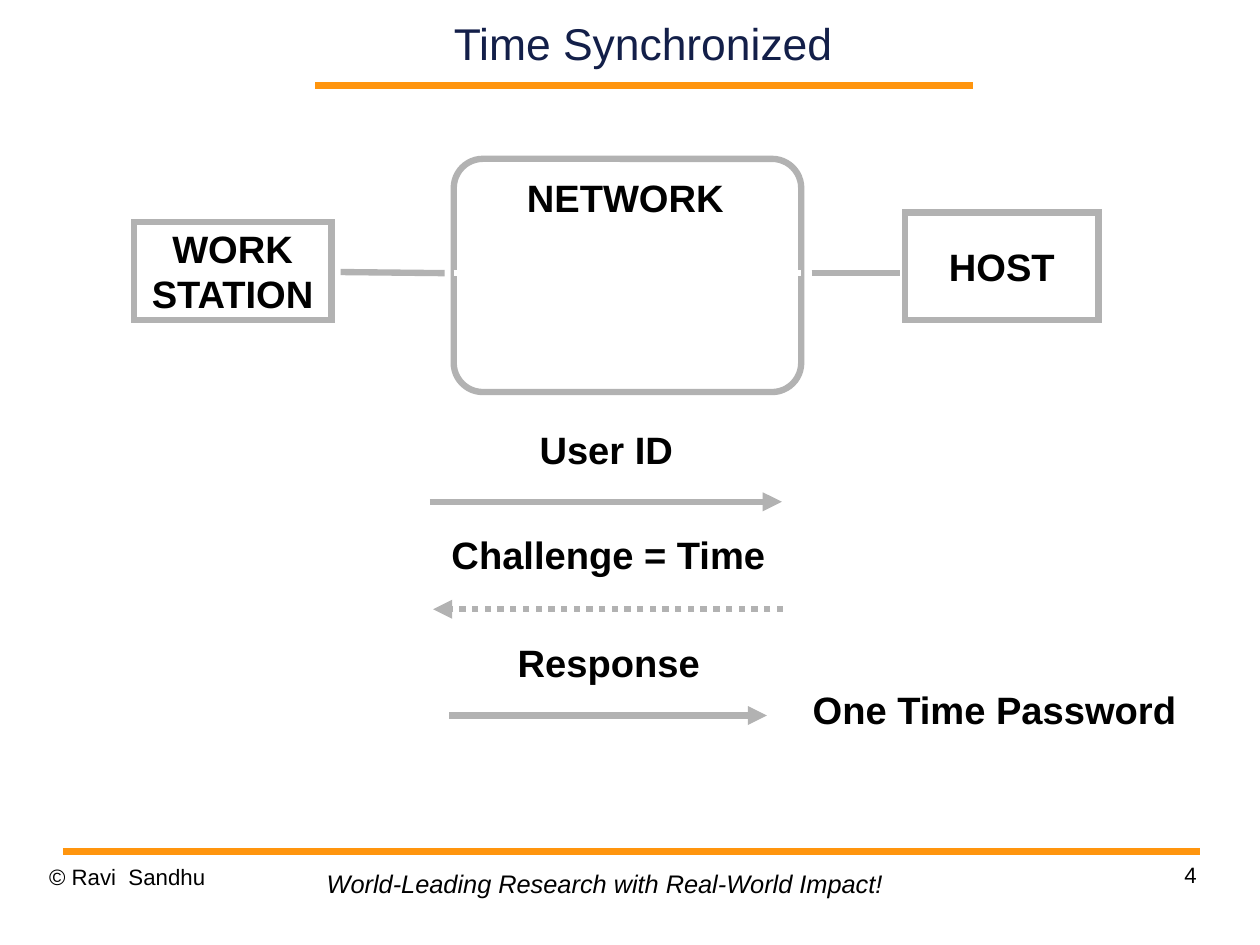
"""Build the Time Synchronized slide: a login exchange between workstation and host."""
from dataclasses import dataclass

from lxml import etree
from pptx import Presentation
from pptx.dml.color import RGBColor
from pptx.enum import dml, shapes, text
from pptx.oxml.ns import qn
from pptx.util import Inches, Pt

LEFT, CENTER, RIGHT = text.PP_ALIGN.LEFT, text.PP_ALIGN.CENTER, text.PP_ALIGN.RIGHT
TOP, MIDDLE = text.MSO_ANCHOR.TOP, text.MSO_ANCHOR.MIDDLE
CM_PER_INCH = 2.54
WIDTH_CM, HEIGHT_CM = 28, 21


@dataclass(frozen=True)
class Theme:
    font: str = "Arial"
    title_ink: str = "131F49"
    ink: str = "000000"
    accent: str = "FF950E"
    gray: str = "B2B2B2"
    paper: str = "FFFFFF"
    title: int = 28
    label: int = 24
    motto: int = 16
    footer: int = 14
    rule: float = 4.31
    stroke: float = 4


T = Theme()


@dataclass(frozen=True)
class Style:
    size: int = T.label
    color: str = T.ink
    bold: bool = False
    italic: bool = False
    align: text.PP_ALIGN = LEFT
    anchor: text.MSO_ANCHOR = TOP
    spacing: float = 1.0
    margins: tuple[float, float] = (0, 0)
    wrap: bool = True


@dataclass(frozen=True)
class Box:
    at: tuple[float, float, float, float]
    lines: tuple[str, ...] = ()
    style: Style = Style()


@dataclass(frozen=True)
class Line:
    start: float
    end: float
    y: float
    y_end: float | None = None
    color: str = T.gray
    width: float = T.stroke
    arrow: bool = False
    dotted: bool = False


TITLE = Style(T.title, T.title_ink, align=CENTER, anchor=MIDDLE)
NODE = Style(bold=True, align=CENTER, anchor=MIDDLE, margins=(0.1, 0.05), wrap=False)
LABEL = Style(bold=True, spacing=0.87, margins=(0.07, 0.03), wrap=False)
FOOTER = Style(T.footer, spacing=1.01)
PAGE = Style(T.footer, align=RIGHT, spacing=1.01)
MOTTO = Style(T.motto, italic=True, margins=(0.1, 0.05), wrap=False)

HEADING = Box((2.41, 0, 6.43, 0.75), ("Time Synchronized",), TITLE)
NODES = (
    Box((7.92, 1.86, 1.69, 0.94), ("HOST",), NODE),
    Box((1.17, 1.94, 1.73, 0.86), ("WORK", "STATION"), NODE),
)
NETWORK = Box((3.97, 1.39, 3.04, 2.04))
TEXTS = (
    Box((0.43, 7.55, 2.57, 0.57), ("© Ravi  Sandhu",), FOOTER),
    Box((7.9, 7.53, 2.57, 0.57), ("4",), PAGE),
    Box((2.76, 7.55, 5.08, 0.37), ("World-Leading Research with Real-World Impact!",), MOTTO),
    Box((4.54, 1.55, 1.87, 0.42), ("NETWORK",), LABEL),
    Box((4.65, 3.76, 1.32, 0.42), ("User ID",), LABEL),
    Box((3.88, 4.67, 2.91, 0.41), ("Challenge = Time",), LABEL),
    Box((4.46, 5.62, 1.74, 0.42), ("Response",), LABEL),
    Box((7.04, 6.03, 3.35, 0.41), ("One Time Password",), LABEL),
)
LINES = (
    Line(2.76, 8.51, 0.75, color=T.accent, width=T.rule),
    Line(0.55, 10.5, 7.45, color=T.accent, width=T.rule),
    Line(2.98, 3.89, 2.38, 2.39),
    Line(3.97, 7.01, 2.39, color=T.paper),
    Line(7.1, 7.87, 2.39),
    Line(3.76, 6.84, 4.39, arrow=True),
    Line(6.85, 3.79, 5.33, arrow=True, dotted=True),
    Line(3.93, 6.71, 6.26, arrow=True),
)


def rgb(color: str) -> RGBColor:
    """Turn a hex string into a colour."""
    return RGBColor.from_string(color)


def write(sp, box: Box) -> None:
    """Fill a shape's text frame in the box's style."""
    st, tf = box.style, sp.text_frame
    tf.word_wrap = st.wrap
    fit = st.anchor == TOP and not st.wrap
    tf.auto_size = text.MSO_AUTO_SIZE.SHAPE_TO_FIT_TEXT if fit else text.MSO_AUTO_SIZE.NONE
    tf.vertical_anchor = st.anchor
    tf.margin_left = tf.margin_right = Inches(st.margins[0])
    tf.margin_top = tf.margin_bottom = Inches(st.margins[1])
    for i, line in enumerate(box.lines):
        p = tf.add_paragraph() if i else tf.paragraphs[0]
        p.alignment, p.line_spacing = st.align, st.spacing
        p.space_before = Pt(0)
        r = p.add_run()
        r.text = line
        f = r.font
        f.name, f.size, f.bold, f.italic = T.font, Pt(st.size), st.bold, st.italic
        f.color.rgb = rgb(st.color)


def add_title(s, box: Box) -> None:
    """Place and fill the title placeholder."""
    sp = s.shapes.title
    sp.left, sp.top, sp.width, sp.height = map(Inches, box.at)
    write(sp, box)


def add_text(s, box: Box) -> None:
    """Add a text box."""
    write(s.shapes.add_textbox(*map(Inches, box.at)), box)


def add_outline(s, kind: shapes.MSO_SHAPE, box: Box):
    """Add an unfilled gray shape with mitred corners."""
    sp = s.shapes.add_shape(kind, *map(Inches, box.at))
    sp.shadow.inherit = False
    sp.fill.background()
    sp.line.color.rgb = rgb(T.gray)
    sp.line.width = Pt(T.stroke)
    etree.SubElement(sp.line._get_or_add_ln(), qn("a:miter"), lim="800000")
    if box.lines:
        write(sp, box)
    return sp


def add_line(s, line: Line) -> None:
    """Add a straight line, with an arrowhead at its end if asked."""
    y_end = line.y if line.y_end is None else line.y_end
    ends = map(Inches, (line.start, line.y, line.end, y_end))
    cx = s.shapes.add_connector(shapes.MSO_CONNECTOR.STRAIGHT, *ends)
    cx.line.color.rgb = rgb(line.color)
    cx.line.width = Pt(line.width)
    if line.dotted:
        cx.line.dash_style = dml.MSO_LINE.ROUND_DOT
    if line.arrow:
        etree.SubElement(cx.line._get_or_add_ln(), qn("a:tailEnd"), type="triangle")
    etree.SubElement(cx._element.spPr, qn("a:effectLst"))


def main() -> None:
    """Build and save the slide."""
    prs = Presentation()
    prs.slide_width = Inches(WIDTH_CM / CM_PER_INCH)
    prs.slide_height = Inches(HEIGHT_CM / CM_PER_INCH)
    s = prs.slides.add_slide(prs.slide_layouts[5])
    s.background.fill.solid()
    s.background.fill.fore_color.rgb = rgb(T.paper)
    add_title(s, HEADING)
    for node in NODES:
        add_outline(s, shapes.MSO_SHAPE.RECTANGLE, node)
    network = add_outline(s, shapes.MSO_SHAPE.ROUNDED_RECTANGLE, NETWORK)
    network.adjustments[0] = 0.125
    for line in LINES:
        add_line(s, line)
    for box in TEXTS:
        add_text(s, box)
    prs.save("out.pptx")


if __name__ == "__main__":
    main()
